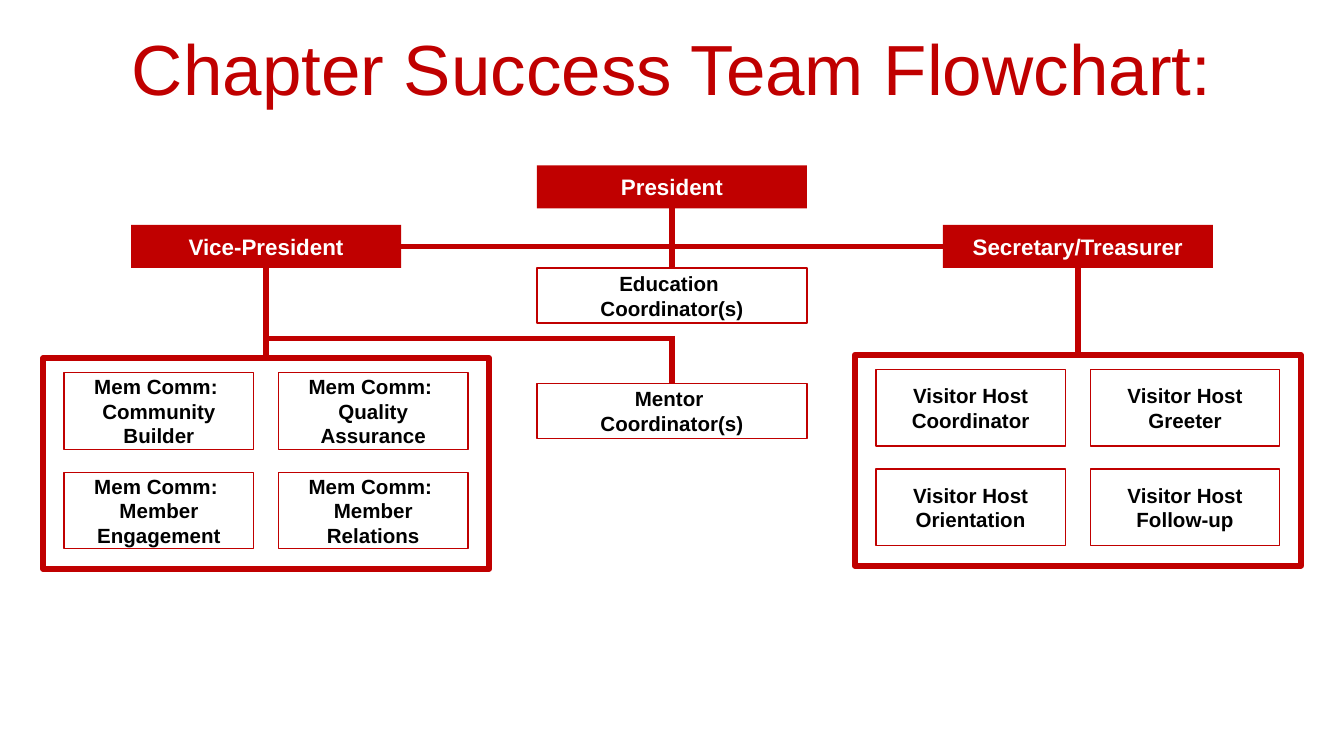
"""Build the chapter success team flowchart on a grid of tenths of an inch."""
from dataclasses import dataclass
from itertools import product

from pptx import Presentation
from pptx.dml.color import RGBColor as Color
from pptx.enum.shapes import MSO_CONNECTOR as Connector, MSO_SHAPE as Shape
from pptx.enum.text import MSO_ANCHOR as Anchor, PP_ALIGN as Align
from pptx.oxml import parse_xml
from pptx.oxml.ns import nsdecls, qn
from pptx.util import Inches, Pt


@dataclass(frozen=True)
class Theme:
    """Colours, font and sizes of the slide."""
    red: Color = Color(0xC0, 0, 0)
    white: Color = Color(255, 255, 255)
    black: Color = Color(0, 0, 0)
    font: str = "Arial"
    title: int = 38
    office: int = 12
    role: int = 11
    thin: float = 0.75
    thick: int = 3


THEME = Theme()
COLUMNS, ROWS = 100, 56.25
CENTER, BRANCH = 50, 30.2
LEFT, RIGHT = CENTER - BRANCH, CENTER + BRANCH
BOX_WIDTH, OFFICE_HEIGHT, ROLE_HEIGHT = 20.1, 3.2, 4.1
PANEL_WIDTH, PANEL_HEIGHT = 33.2, 15.7
CARD_WIDTH, CARD_HEIGHT = 14.1, 5.7
CARD_COLUMN, CARD_ROW = 15.95, 7.4
CARD_TOP = 1.1
TOP, BOTTOM, LEFT_SIDE, RIGHT_SIDE = 0, 2, 1, 3
BRANCH_ROW, MENTOR_ROW = 25.2, 28.53

MEMBERSHIP = [
    "Mem Comm: \vCommunity Builder", "Mem Comm: \vQuality Assurance",
    "Mem Comm: \vMember Engagement", "Mem Comm: \vMember Relations",
]
VISITORS = [
    "Visitor Host Coordinator", "Visitor Host Greeter",
    "Visitor Host Orientation", "Visitor Host Follow-up",
]


def grid(*cells):
    """Turn grid columns or rows into slide lengths."""
    return [Inches(cell / 10) for cell in cells]


def write(box, text, size, color, bold=True, margin=0.7):
    """Put centred text in a box."""
    frame = box.text_frame
    frame.word_wrap = True
    frame.margin_left, frame.margin_right = grid(0.7, 0.7)
    frame.margin_top, frame.margin_bottom = grid(margin, margin)
    frame.text = text
    para = frame.paragraphs[0]
    para.alignment = Align.CENTER
    for span in para.runs:
        span.font.name = THEME.font
        span.font.size = Pt(size)
        span.font.bold = bold
        span.font.color.rgb = color


def add_title(page, text):
    """Add the title across the slide."""
    box = page.shapes.add_textbox(*grid(0, 1.45, COLUMNS, 7.8))
    write(box, text, THEME.title, THEME.red, bold=False, margin=0.4)


def add_box(page, center, top, width, height, fill=None, weight=None):
    """Add a rectangle centred on a column."""
    box = page.shapes.add_shape(
        Shape.RECTANGLE, *grid(center - width / 2, top, width, height))
    box.shadow.inherit = False
    if fill is None:
        box.fill.background()
    else:
        box.fill.solid()
        box.fill.fore_color.rgb = fill
    if weight is None:
        box.line.fill.background()
    else:
        box.line.color.rgb = THEME.red
        box.line.width = Pt(weight)
    return box


def add_office(page, center, top, text):
    """Add a filled box for an officer."""
    box = add_box(page, center, top, BOX_WIDTH, OFFICE_HEIGHT, THEME.red)
    box.text_frame.vertical_anchor = Anchor.MIDDLE
    write(box, text, THEME.office, THEME.white)
    return box


def add_role(page, center, top, text, width=BOX_WIDTH, height=ROLE_HEIGHT):
    """Add an outlined box for a role."""
    box = add_box(page, center, top, width, height, THEME.white, THEME.thin)
    box.text_frame.vertical_anchor = Anchor.MIDDLE
    write(box, text, THEME.role, THEME.black)
    return box


def add_panel(page, center, top):
    """Add a heavy round-cornered frame for a committee."""
    panel = add_box(page, center, top, PANEL_WIDTH, PANEL_HEIGHT, weight=THEME.thick)
    outline = panel._element.spPr.find(qn("a:ln"))
    outline.append(parse_xml(f"<a:round {nsdecls('a')}/>"))
    return panel


def add_cards(page, center, top, names):
    """Fill a panel with two rows of two roles."""
    for (row, column), name in zip(product(range(2), repeat=2), names):
        add_role(page, center + (column - 0.5) * CARD_COLUMN,
                 top + CARD_TOP + row * CARD_ROW, name, CARD_WIDTH, CARD_HEIGHT)


def add_line(page, start=(0, 0), end=(0, 0), source=None, target=None):
    """Draw a line between points or between the sides of boxes."""
    line = page.shapes.add_connector(Connector.STRAIGHT, *grid(*start, *end))
    line.line.color.rgb = THEME.red
    line.line.width = Pt(THEME.thick)
    line._element.spPr.append(parse_xml(f"<a:effectLst {nsdecls('a')}/>"))
    if source:
        line.begin_connect(*source)
    if target:
        line.end_connect(*target)


def main():
    """Build and save the slide."""
    deck = Presentation()
    deck.slide_width, deck.slide_height = grid(COLUMNS, ROWS)
    page = deck.slides.add_slide(deck.slide_layouts[6])

    officers_top, members_top, visitors_top = 16.74, 26.64, 26.4
    members = add_panel(page, LEFT, members_top)
    visitors = add_panel(page, RIGHT, visitors_top)
    add_title(page, "Chapter Success Team Flowchart:")
    president = add_office(page, CENTER, 12.3, "President")
    secretary = add_office(page, RIGHT, officers_top, "Secretary/Treasurer")
    vice = add_office(page, LEFT, officers_top, "Vice-President")
    education = add_role(page, CENTER, 19.95, "Education \vCoordinator(s)")
    mentor = add_role(page, CENTER, MENTOR_ROW, "Mentor \vCoordinator(s)")

    for source, target in [
        ((vice, RIGHT_SIDE), (secretary, LEFT_SIDE)),
        ((president, BOTTOM), (education, TOP)),
        ((vice, BOTTOM), (members, TOP)),
        ((secretary, BOTTOM), (visitors, TOP)),
    ]:
        add_line(page, source=source, target=target)
    add_line(page, (LEFT, BRANCH_ROW), (CENTER, BRANCH_ROW))
    add_line(page, (CENTER, BRANCH_ROW - 0.2), (CENTER, MENTOR_ROW),
             target=(mentor, TOP))

    add_cards(page, LEFT, members_top, MEMBERSHIP)
    add_cards(page, RIGHT, visitors_top, VISITORS)
    deck.save("out.pptx")


if __name__ == "__main__":
    main()
